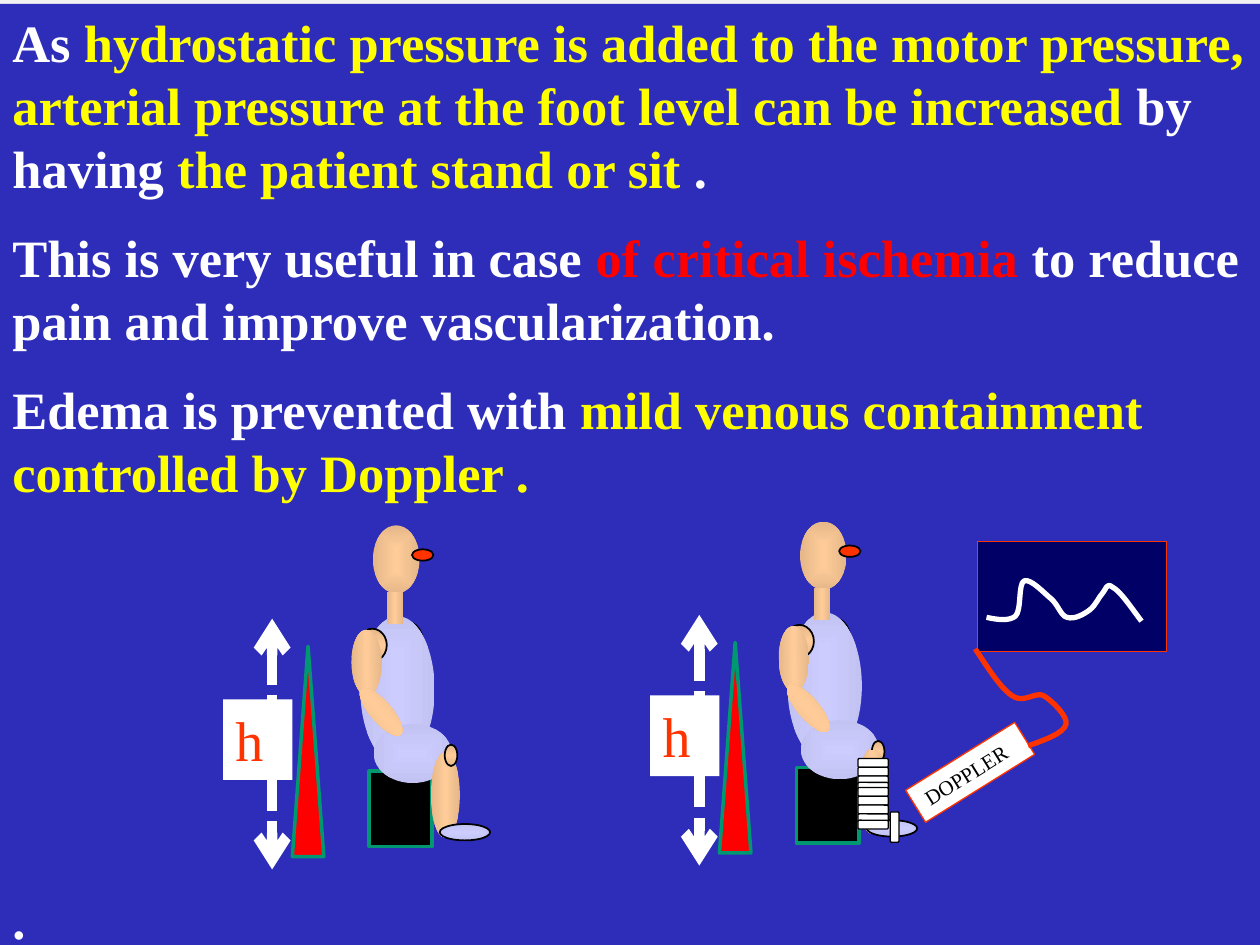
from dataclasses import dataclass, replace

from lxml.etree import SubElement
from pptx import Presentation
from pptx.dml.color import RGBColor
from pptx.enum.dml import MSO_PATTERN
from pptx.enum.shapes import MSO_CONNECTOR, MSO_SHAPE
from pptx.enum.text import MSO_ANCHOR, PP_ALIGN
from pptx.oxml import parse_xml
from pptx.oxml.ns import nsdecls, qn
from pptx.util import Emu, Pt

PX = 9144  # 100 px to the inch
FONT = "Times New Roman"
COLORS = {
    "backdrop": "F2F2F2", "blue": "2D2DB9", "navy": "000066", "white": "FFFFFF",
    "black": "000000", "yellow": "FFFF00", "red": "FF0000", "orange": "FF3300",
    "green": "009771", "mint": "00CC99", "skin": "FFCC99", "tan": "E5B789",
    "lilac": "CCCCFF", "mauve": "C3C3F3",
}
# Gradient name -> stop colours and direction in degrees (None = from the centre)
GRADIENTS = {
    "head": (("skin", "tan"), None),
    "cloth": (("lilac", "mauve"), None),
    "limb": (("tan", "skin", "tan"), 0),
    "joint": (("tan", "skin", "tan"), 90),
}
OVAL, RECT = MSO_SHAPE.OVAL, MSO_SHAPE.RECTANGLE


@dataclass(frozen=True)
class Part:
    x: int
    y: int
    w: int
    h: int
    fill: str
    kind: MSO_SHAPE = OVAL
    line: str = ""
    weight: float = 1
    rot: float = 0
    flip: str = ""


# Seated patient, from back to front
PATIENT = [
    Part(293, 612, 50, 60, "black", RECT, "green", 2),        # stool
    Part(313, 494, 23, 34, "stripes", line="black"),          # far shoulder
    Part(296, 417, 37, 54, "head"),
    Part(286, 489, 59, 117, "cloth"),                         # trunk
    Part(307, 470, 13, 25, "limb", RECT),                     # neck
    Part(304, 567, 47, 62, "cloth", rot=270, flip="flipH"),   # thigh
    Part(342, 597, 23, 68, "limb"),                           # lower leg
    Part(349, 654, 40, 13, "cloth", line="black"),            # foot
    Part(353, 591, 10, 17, "joint", line="black"),            # knee
    Part(284, 499, 23, 26, "joint", line="black"),            # near shoulder
    Part(279, 500, 24, 52, "limb", rot=359.2),                # upper arm
    Part(294, 541, 17, 48, "limb", rot=319.2),                # forearm
    Part(327, 436, 17, 9, "orange", line="black"),            # mouth
]
PRESSURE = Part(232, 513, 25, 167, "red", MSO_SHAPE.FLOWCHART_MERGE, "green", 2,
                flip="flipV")
HEIGHT_LABEL = Part(177, 555, 55, 64, "white", RECT)
BAND = Part(681, 602, 24, 7, "white", MSO_SHAPE.ROUNDED_RECTANGLE, "black", 0.75)
BAND_TOPS = (602, 609, 616, 621, 625, 632, 639, 646, 651)

# Cubic curves: a start point, then three points per segment
WAVE = [(783, 490), (792, 492), (801, 493), (806, 489), (811, 484), (808, 463),
        (813, 461), (818, 459), (829, 471), (834, 475), (840, 480), (842, 489),
        (847, 490), (853, 492), (861, 487), (865, 484), (870, 480), (872, 474),
        (875, 471), (878, 468), (878, 462), (883, 466), (889, 469), (897, 481),
        (906, 493)]
CABLE = [(816, 592), (830, 587), (844, 582), (846, 575), (848, 569), (835, 556),
         (828, 552), (821, 549), (812, 559), (803, 552), (794, 546), (784, 530),
         (774, 515)]

TEXT = [
    [("As ", "white"),
     ("hydrostatic pressure is added to the motor pressure, arterial pressure "
      "at the foot level can be increased ", "yellow"),
     ("by having ", "white"), ("the patient stand or sit ", "yellow"), (".", "white")],
    [("This is very useful in case ", "white"), ("of critical ischemia ", "red"),
     ("to reduce pain and improve vascularization.", "white")],
    [("Edema is prevented with ", "white"),
     ("mild venous containment controlled by Doppler .", "yellow")],
    [(".", "white")],
]


def px(n: int) -> Emu:
    return Emu(n * PX)


def rgb(name: str) -> RGBColor:
    return RGBColor.from_string(COLORS[name])


def set_gradient(sp, name: str) -> None:
    names, angle = GRADIENTS[name]
    stops = "".join(
        f'<a:gs pos="{100000 * i // (len(names) - 1)}">'
        f'<a:srgbClr val="{COLORS[c]}"/></a:gs>' for i, c in enumerate(names))
    if angle is None:
        way = ('<a:path path="shape"><a:fillToRect l="50000" t="50000" '
               'r="50000" b="50000"/></a:path>')
    else:
        way = f'<a:lin ang="{angle * 60000}" scaled="1"/>'
    sp.fill.background()
    pr = sp._element.spPr
    pr.replace(pr.find(qn("a:noFill")), parse_xml(
        f'<a:gradFill rotWithShape="1" {nsdecls("a")}><a:gsLst>{stops}</a:gsLst>{way}'
        '</a:gradFill>'))


def set_style(sp, fill: str = "", line: str = "", weight: float = 1) -> None:
    sp.shadow.inherit = False
    if fill in GRADIENTS:
        set_gradient(sp, fill)
    elif fill == "stripes":
        sp.fill.patterned()
        sp.fill.pattern = MSO_PATTERN.DARK_HORIZONTAL
        sp.fill.fore_color.rgb = rgb("mint")
        sp.fill.back_color.rgb = rgb("white")
    elif fill:
        sp.fill.solid()
        sp.fill.fore_color.rgb = rgb(fill)
    else:
        sp.fill.background()
    if line:
        sp.line.color.rgb = rgb(line)
        sp.line.width = Pt(weight)
    else:
        sp.line.fill.background()


def draw(shapes, part: Part, dx: int = 0, dy: int = 0):
    sp = shapes.add_shape(part.kind, px(part.x + dx), px(part.y + dy),
                          px(part.w), px(part.h))
    set_style(sp, part.fill, part.line, part.weight)
    sp.rotation = part.rot
    if part.flip:
        sp._element.spPr.xfrm.set(part.flip, "1")
    return sp


def write(sp, paragraphs: list, *, size: float, bold: bool = False,
          before: tuple = (0,)) -> None:
    tf = sp.text_frame
    tf.word_wrap = True
    tf.vertical_anchor = MSO_ANCHOR.TOP
    for i, (runs, gap) in enumerate(zip(paragraphs, before)):
        p = tf.add_paragraph() if i else tf.paragraphs[0]
        p.alignment = PP_ALIGN.LEFT
        p.space_before = Pt(gap)
        p.line_spacing = Pt(size * 1.2)
        for text, color in runs:
            r = p.add_run()
            r.text = text
            r.font.name, r.font.size, r.font.bold = FONT, Pt(size), bold
            r.font.color.rgb = rgb(color)


def draw_arrow(shapes, x: int, top: int, bottom: int) -> None:
    cn = shapes.add_connector(MSO_CONNECTOR.STRAIGHT, px(x), px(top), px(x), px(bottom))
    cn.line.color.rgb = rgb("white")
    cn.line.width = Pt(6)
    ln = cn.line._get_or_add_ln()
    for tag in ('prstDash val="sysDash"', 'headEnd type="arrow"', 'tailEnd type="arrow"'):
        ln.append(parse_xml(f'<a:{tag} {nsdecls("a")}/>'))
    cn._element.spPr.append(parse_xml(f'<a:effectLst {nsdecls("a")}/>'))


def draw_curve(shapes, points: list, color: str, fill: str = "") -> None:
    fb = shapes.build_freeform(*points[0], scale=PX)
    fb.add_line_segments(points[1:], close=False)
    sp = fb.convert_to_shape()
    # Join each three line points into one cubic segment
    outline = next(sp._element.iter(qn("a:path")))
    lines = outline.findall(qn("a:lnTo"))
    for i in range(0, len(lines), 3):
        cubic = SubElement(outline, qn("a:cubicBezTo"))
        for ln in lines[i:i + 3]:
            cubic.append(ln[0])
            outline.remove(ln)
    set_style(sp, fill, color, 3)


def draw_patient(shapes, dx: int = 0, dy: int = 0) -> None:
    group = shapes.add_group_shape()
    for part in PATIENT:
        draw(group.shapes, part, dx, dy)
    draw(shapes, PRESSURE, dx, dy)
    draw_arrow(shapes, 216 + dx, 491 + dy, 690 + dy)
    write(draw(shapes, HEIGHT_LABEL, dx, dy), [[("h", "orange")]], size=32)


def main() -> None:
    prs = Presentation()
    prs.slide_width, prs.slide_height = px(1000), px(750)
    s = prs.slides.add_slide(prs.slide_layouts[6])
    s.background.fill.solid()
    s.background.fill.fore_color.rgb = rgb("backdrop")

    # Text panel
    panel = draw(s.shapes, Part(0, 3, 1000, 785, "blue", RECT))
    write(panel, TEXT, size=30, bold=True, before=(0, 15, 15, 219))

    # Two seated patients
    draw_patient(s.shapes)
    draw_patient(s.shapes, 339, -3)

    # Bandaged leg
    leg = s.shapes.add_group_shape().shapes
    draw(leg, Part(681, 595, 23, 63, "limb"))
    for top in BAND_TOPS:
        draw(leg, replace(BAND, y=top))
    draw(s.shapes, replace(BAND, x=698, y=653, rot=90))

    # Doppler screen, probe and cable
    doppler = s.shapes.add_group_shape().shapes
    draw(doppler, Part(776, 430, 150, 87, "navy", RECT, "orange", 0.75))
    draw_curve(doppler, WAVE, "white", "navy")
    probe = draw(doppler, Part(719, 598, 102, 30, "white", RECT, "orange", 0.75, 328.1))
    write(probe, [[("DOPPLER", "black")]], size=12)
    draw_curve(doppler, CABLE, "orange")

    prs.save("out.pptx")


if __name__ == "__main__":
    main()
